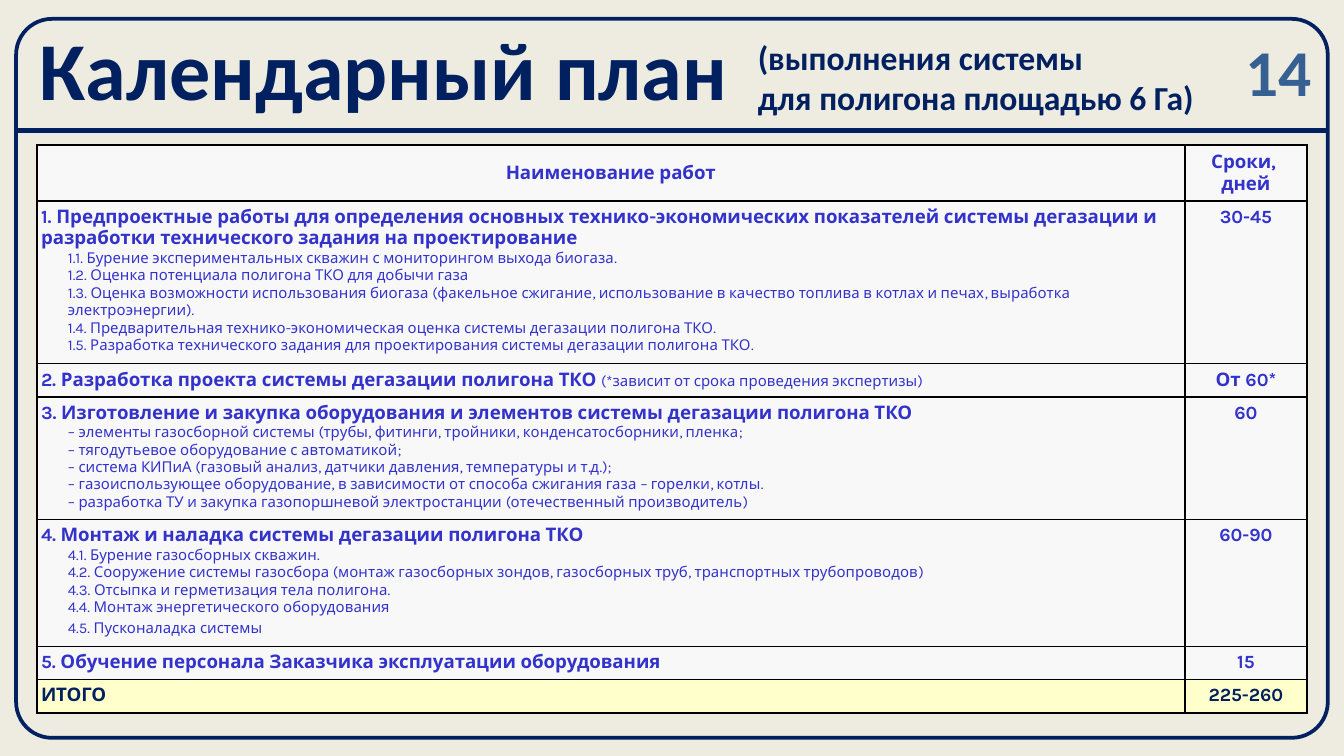
from lxml.etree import SubElement
from pptx import Presentation
from pptx.dml.color import RGBColor
from pptx.enum.shapes import MSO_CONNECTOR, MSO_SHAPE
from pptx.enum.text import MSO_ANCHOR, PP_ALIGN
from pptx.oxml import parse_xml
from pptx.oxml.ns import nsdecls, qn
from pptx.util import Inches, Pt

NAVY = RGBColor(0x00, 0x20, 0x60)
STEEL = RGBColor(0x37, 0x60, 0x92)
VIOLET = RGBColor(0x33, 0x33, 0xCC)
BLACK = RGBColor(0x00, 0x00, 0x00)
CREAM = RGBColor(0xEE, 0xEC, 0xE1)
PALE = RGBColor(0xF8, 0xF8, 0xF8)
YELLOW = RGBColor(0xFF, 0xFF, 0xCC)

GRID_COLUMNS = 100
GRID_ROWS = 56.25

STAGES = [
    ("1. Предпроектные работы для определения основных технико-экономических показателей "
     "системы дегазации и разработки технического задания на проектирование", "", [
         "1.1. Бурение экспериментальных скважин с мониторингом выхода биогаза.",
         "1.2. Оценка потенциала полигона ТКО для добычи газа",
         "1.3. Оценка возможности использования биогаза (факельное сжигание, использование "
         "в качество топлива в котлах и печах, выработка электроэнергии).",
         "1.4. Предварительная технико-экономическая оценка системы дегазации полигона ТКО.",
         "1.5. Разработка технического задания для проектирования системы дегазации полигона ТКО.",
     ], "30-45", 12.1),
    ("2. Разработка проекта системы дегазации полигона ТКО ",
     "(*зависит от срока проведения экспертизы)", [], "От 60*", 2.45),
    ("3. Изготовление и закупка оборудования и элементов системы дегазации полигона ТКО", "", [
        "– элементы газосборной системы (трубы, фитинги, тройники, конденсатосборники, пленка;",
        "– тягодутьевое оборудование с автоматикой;",
        "– система КИПиА (газовый анализ, датчики давления, температуры и т.д.);",
        "– газоиспользующее оборудование, в зависимости от способа сжигания газа – горелки, котлы.",
        "– разработка ТУ и закупка газопоршневой электростанции (отечественный производитель)",
    ], "60", 9.1),
    ("4. Монтаж и наладка системы дегазации полигона ТКО", "", [
        "4.1. Бурение газосборных скважин.",
        "4.2. Сооружение системы газосбора (монтаж газосборных зондов, газосборных труб, "
        "транспортных трубопроводов)",
        "4.3. Отсыпка и герметизация тела полигона.",
        "4.4. Монтаж энергетического оборудования",
        "4.5. Пусконаладка системы",
    ], "60-90", 9.45),
    ("5. Обучение персонала Заказчика эксплуатации оборудования", "", [], "15", 2.45),
    ("ИТОГО", "", [], "225-260", 2.45),
]


def add_span(para, text, size=10, color=VIOLET, bold=True, font="Karla"):
    span = para.add_run()
    span.text = text
    span.font.size = Pt(size)
    span.font.name = font
    span.font.bold = bold
    span.font.color.rgb = color


def write_lines(frame, lines, align=PP_ALIGN.LEFT, **style):
    for index, line in enumerate(lines):
        para = frame.paragraphs[0] if index == 0 else frame.add_paragraph()
        para.alignment = align
        add_span(para, line, **style)


class PlanSlide:
    heading_font = "Calibri"

    def __init__(self, deck):
        self.unit_x = deck.slide_width / GRID_COLUMNS
        self.unit_y = deck.slide_height / GRID_ROWS
        self.page = deck.slides.add_slide(deck.slide_layouts[5])
        self.page.background.fill.solid()
        self.page.background.fill.fore_color.rgb = CREAM

    def across(self, columns):
        return round(columns * self.unit_x)

    def down(self, rows):
        return round(rows * self.unit_y)

    def area(self, left, top, width, height):
        return self.across(left), self.down(top), self.across(width), self.down(height)

    def title(self, text, *place):
        box = self.page.shapes.title
        box.left, box.top, box.width, box.height = self.area(*place)
        frame = box.text_frame
        frame.vertical_anchor = MSO_ANCHOR.TOP
        frame.margin_top = frame.margin_bottom = 0
        write_lines(frame, [text], size=44, color=NAVY, font=self.heading_font)

    def frame(self, *place):
        box = self.page.shapes.add_shape(MSO_SHAPE.ROUNDED_RECTANGLE, *self.area(*place))
        box.adjustments[0] = 0.05
        box.shadow.inherit = False
        box.fill.background()
        box.line.color.rgb = NAVY
        box.line.width = Pt(2)

    def text(self, lines, *place, anchor=MSO_ANCHOR.TOP, margin=None, **style):
        frame = self.page.shapes.add_textbox(*self.area(*place)).text_frame
        frame.word_wrap = True
        frame.vertical_anchor = anchor
        if margin is not None:
            frame.margin_left = frame.margin_right = margin
            frame.margin_top = frame.margin_bottom = margin
        write_lines(frame, lines, font=self.heading_font, **style)

    def rule(self, left, right, top):
        line = self.page.shapes.add_connector(
            MSO_CONNECTOR.STRAIGHT, self.across(left), self.down(top),
            self.across(right), self.down(top))
        line.line.color.rgb = NAVY
        line.line.width = Pt(3)
        SubElement(line._element.spPr, qn("a:effectLst"))

    def cell(self, cell, fill, anchor=MSO_ANCHOR.TOP):
        cell.margin_left = cell.margin_right = Inches(0.03)
        cell.margin_top = cell.margin_bottom = Inches(0.04)
        cell.vertical_anchor = anchor
        properties = cell._tc.get_or_add_tcPr()
        for side in ("lnL", "lnR", "lnT", "lnB"):
            properties.append(parse_xml(
                f'<a:{side} {nsdecls("a")} w="{Pt(1)}"><a:solidFill>'
                f'<a:srgbClr val="{BLACK}"/></a:solidFill></a:{side}>'))
        cell.fill.solid()
        cell.fill.fore_color.rgb = fill
        return cell.text_frame

    def plan(self, stages, left, top, widths, header_height):
        heights = [header_height] + [stage[-1] for stage in stages]
        table = self.page.shapes.add_table(
            len(heights), len(widths),
            *self.area(left, top, sum(widths), sum(heights))).table
        for column, width in zip(table.columns, widths):
            column.width = self.across(width)
        for row, height in zip(table.rows, heights):
            row.height = self.down(height)

        for column, lines in enumerate((["Наименование работ"], ["Сроки, ", "дней"])):
            frame = self.cell(table.cell(0, column), PALE, MSO_ANCHOR.MIDDLE)
            write_lines(frame, lines, PP_ALIGN.CENTER)

        for row, (name, note, steps, days, _) in enumerate(stages, 1):
            is_total = row == len(stages)
            fill, color = (YELLOW, NAVY) if is_total else (PALE, VIOLET)
            frame = self.cell(table.cell(row, 0), fill)
            write_lines(frame, [name], color=color)
            if note:
                add_span(frame.paragraphs[0], note, size=8, bold=False)
            for step in steps:
                para = frame.add_paragraph()
                para._p.get_or_add_pPr().set("marL", str(Inches(0.2)))
                add_span(para, step, size=8, bold=False)
                if step.startswith("4.5."):
                    para.space_before = Pt(2)
            write_lines(self.cell(table.cell(row, 1), fill), [days], PP_ALIGN.CENTER, color=color)


def main():
    deck = Presentation()
    deck.slide_width = Inches(10)
    deck.slide_height = deck.slide_width * 9 // 16
    slide = PlanSlide(deck)
    slide.title("Календарный план", 1.95, 1.4, 94.9, 9.4)
    slide.frame(1.2, 1.4, 97.6, 53.5)
    slide.text(["14"], 91.8, 2.1, 6.7, 6.3, anchor=MSO_ANCHOR.MIDDLE, margin=0,
               align=PP_ALIGN.CENTER, size=35, color=STEEL)
    slide.text(["(выполнения системы", "для полигона площадью 6 Га)"],
               55.4, 2.25, 39.4, 7.1, size=18, color=NAVY)
    slide.rule(1.2, 98.9, 9.7)
    slide.plan(STAGES, 2.75, 10.8, (85.4, 9.1), 4.1)
    deck.save("out.pptx")


if __name__ == "__main__":
    main()
